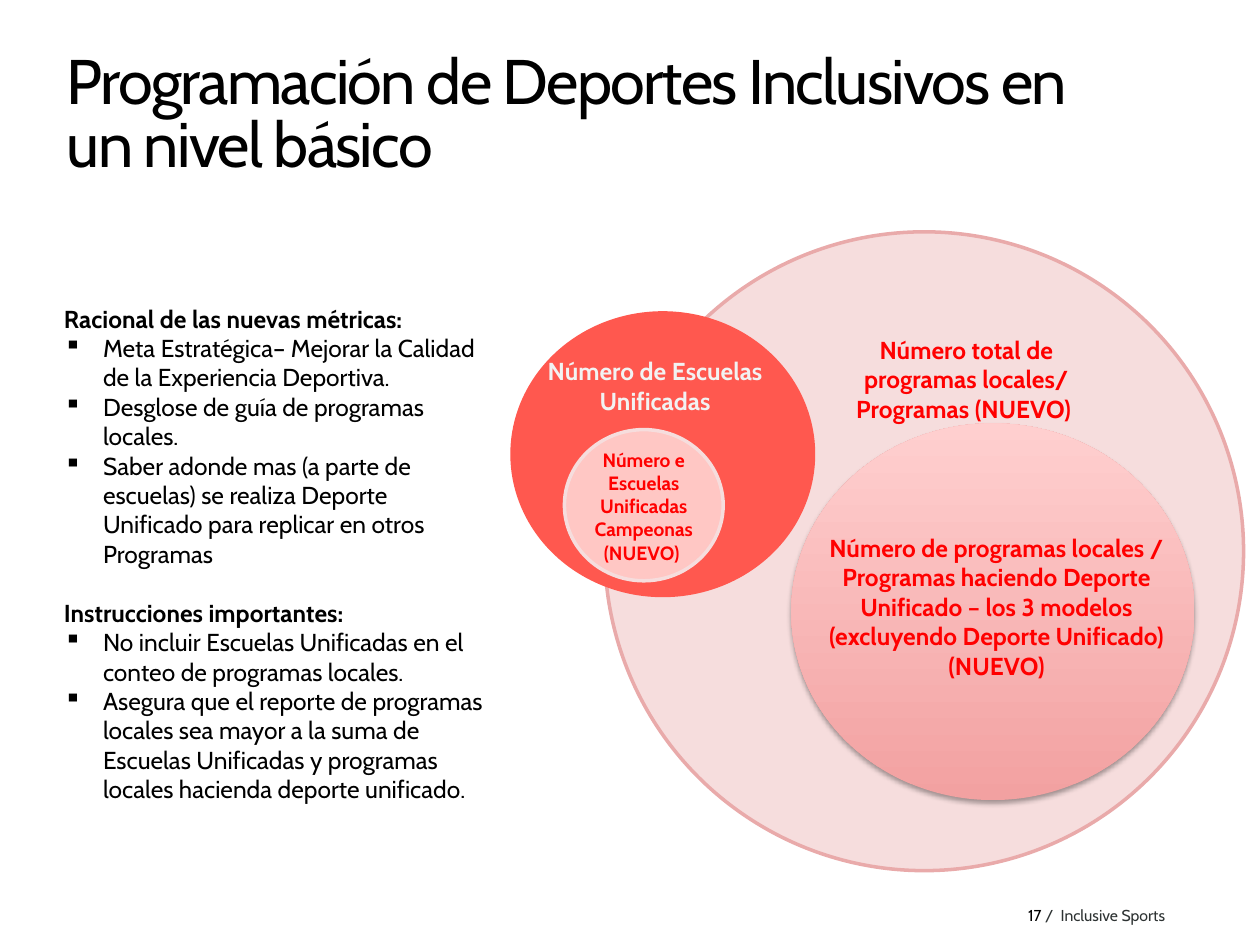
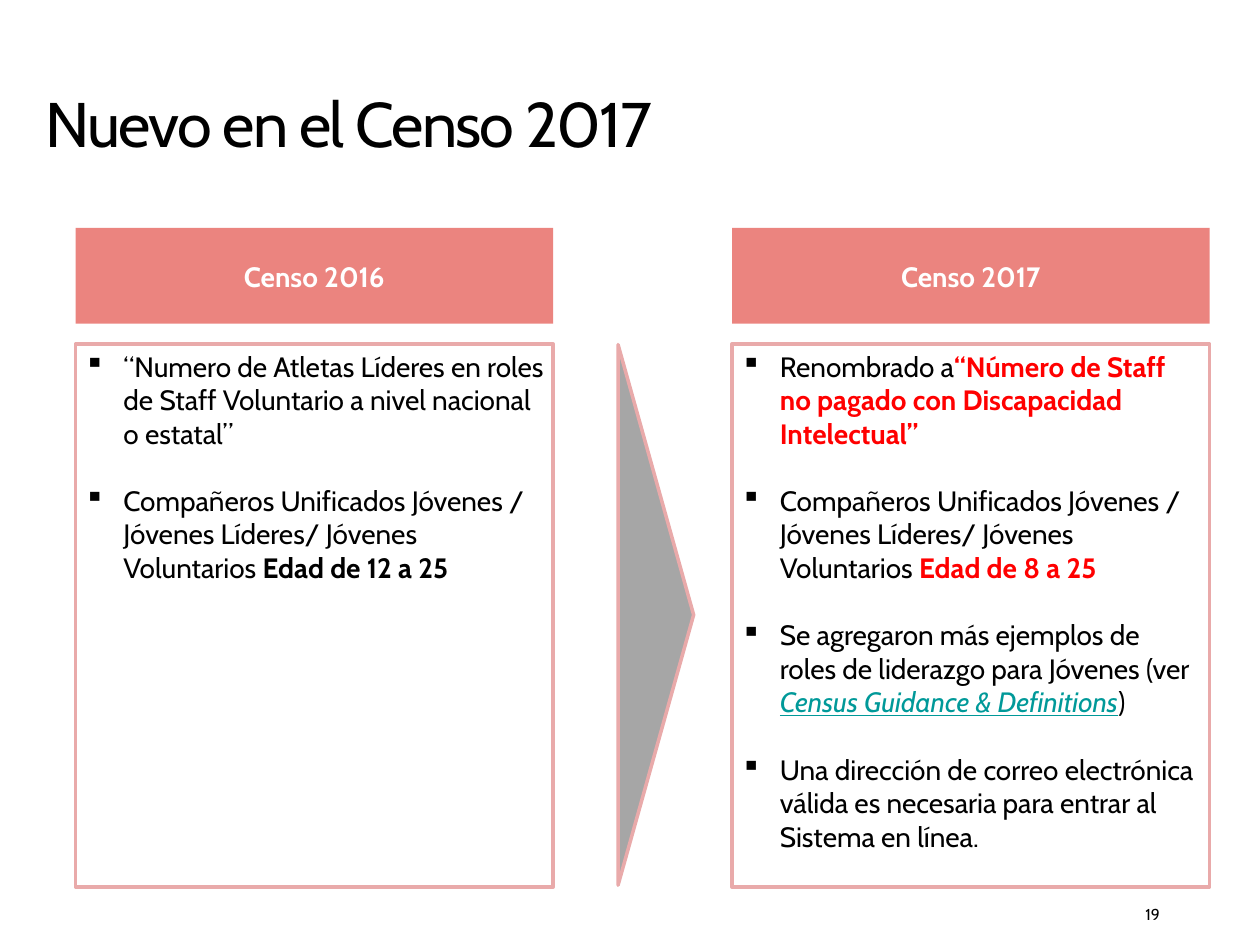
"""Builds two slides on the programme metrics and the changes in the 2017 census."""
from lxml.etree import SubElement
from pptx import Presentation
from pptx.dml.color import RGBColor
from pptx.enum.shapes import MSO_SHAPE
from pptx.enum.text import MSO_ANCHOR, MSO_AUTO_SIZE, PP_ALIGN
from pptx.oxml.ns import qn
from pptx.util import Inches, Pt

FONT = "Cabin"
COLORS = {
    "black": "000000", "white": "FFFFFF", "pale": "F2F2F2", "slate": "2E3333",
    "red": "FF0000", "coral": "FF584F", "blush": "FFC7C4", "rose": "F6DDDD",
    "outline": "E9AAAA", "band": "D90B00", "grey": "A6A6A6", "link": "009999",
    "grad_bottom": "F2A1A1", "grad_top": "FFCFCF",
}
TIGHT = (0.07, 0.04)
LOOSE = (0.1, 0.05)
RED_BOLD = {"color": "red", "bold": True}
YOUTH = "Compañeros Unificados Jóvenes / Jóvenes Líderes/ Jóvenes Voluntarios "


def rgb(name):
    return RGBColor.from_string(COLORS[name])


def place(sp, box):
    for name, value in zip(("left", "top", "width", "height"), box):
        setattr(sp, name, Inches(value))


def set_frame(tf, insets, anchor=MSO_ANCHOR.TOP):
    x, y = (Inches(v) for v in insets)
    values = {"margin_left": x, "margin_right": x, "margin_top": y, "margin_bottom": y,
              "word_wrap": True, "auto_size": MSO_AUTO_SIZE.NONE, "vertical_anchor": anchor}
    for name, value in values.items():
        setattr(tf, name, value)


def add_run(p, text, size, color="black", **fmt):
    r = p.add_run()
    r.text = text
    for name, value in {"name": FONT, "size": Pt(size), **fmt}.items():
        setattr(r.font, name, value)
    r.font.color.rgb = rgb(color)
    return r


def add_bullet(p):
    pPr = p._p.get_or_add_pPr()
    pPr.set("marL", str(Inches(0.31)))
    pPr.set("indent", str(-Inches(0.31)))
    SubElement(pPr, qn("a:buChar")).set("char", "▪")


def write(tf, paragraphs, size, align=PP_ALIGN.LEFT):
    """Fill a frame from dicts with runs, and optionally bullet and gap (one line before)."""
    for i, item in enumerate(paragraphs):
        p = tf.add_paragraph() if i else tf.paragraphs[0]
        if item.get("bullet"):
            add_bullet(p)
        p.alignment = align
        if item.get("gap"):
            p.space_before = Pt(size * 1.2)
        for text, fmt in item["runs"]:
            add_run(p, text, size, **fmt)


def para(*runs, **options):
    return {"runs": [(r, {}) if isinstance(r, str) else r for r in runs], **options}


def add_title(s, text, box):
    sp = s.shapes.title
    place(sp, box)
    set_frame(sp.text_frame, (0.04, 0.04), MSO_ANCHOR.MIDDLE)
    p = sp.text_frame.paragraphs[0]
    p.alignment, p.line_spacing = PP_ALIGN.LEFT, Pt(36)
    r = add_run(p, text, 36)
    r._r.get_or_add_rPr().set("spc", "-100")


def add_text(s, box, paragraphs, size, align=PP_ALIGN.LEFT, insets=LOOSE):
    sp = s.shapes.add_textbox(*(Inches(v) for v in box))
    set_frame(sp.text_frame, insets)
    write(sp.text_frame, paragraphs, size, align)


def add_label(s, box, text, size=14, color="red"):
    add_text(s, box, [para((text, {"color": color, "bold": True}))], size, PP_ALIGN.CENTER)


def add_figure(s, kind, box, fill, line=None):
    sp = s.shapes.add_shape(kind, *(Inches(v) for v in box))
    sp.shadow.inherit = False
    sp.fill.solid()
    sp.fill.fore_color.rgb = rgb(fill)
    if line:
        sp.line.color.rgb, sp.line.width = rgb(line), Pt(2)
    else:
        sp.line.fill.background()
    return sp


def add_gradient(sp, start, end):
    sp.fill.gradient()
    sp.fill.gradient_angle = 90
    for stop, name in zip(sp.fill.gradient_stops, (start, end)):
        stop.color.rgb = rgb(name)


def add_shadow(sp):
    effects = sp._element.spPr.find(qn("a:effectLst"))
    shadow = SubElement(effects, qn("a:outerShdw"))
    values = {"blurRad": Pt(3.1), "dist": Pt(1.8), "dir": 90 * 60000, "rotWithShape": 0}
    for name, value in values.items():
        shadow.set(name, str(value))
    color = SubElement(shadow, qn("a:srgbClr"))
    color.set("val", COLORS["black"])
    SubElement(color, qn("a:alpha")).set("val", "35000")


def add_census_column(s, left, heading, paragraphs):
    sp = add_figure(s, MSO_SHAPE.RECTANGLE, (left, 2.73, 3.79, 4.31), "white", "outline")
    set_frame(sp.text_frame, TIGHT)
    write(sp.text_frame, paragraphs, 16)
    band = add_figure(s, MSO_SHAPE.RECTANGLE, (left, 1.81, 3.79, 0.76), "band")
    color = band._element.spPr.find(qn("a:solidFill"))[0]
    SubElement(color, qn("a:alpha")).set("val", "50000")
    set_frame(band.text_frame, TIGHT, MSO_ANCHOR.MIDDLE)
    write(band.text_frame, [para((heading, {"color": "white", "bold": True}))], 16,
          PP_ALIGN.CENTER)


def add_footer(s, box, *runs):
    add_text(s, box, [para(*runs)], 9, insets=TIGHT)


def build_programs(s):
    add_title(s, "Programación de Deportes Inclusivos en un nivel básico",
              (0.49, 0.36, 8.58, 1.14))
    add_footer(s, (8.09, 7.15, 1.4, 0.2), "17", (" /  Inclusive Sports", {"color": "slate"}))
    oval = MSO_SHAPE.OVAL
    add_figure(s, oval, (4.8, 1.84, 5.07, 5.07), "rose", "outline")
    unified = add_figure(s, oval, (6.28, 3.36, 3.2, 2.99), "rose")
    add_gradient(unified, "grad_bottom", "grad_top")
    add_shadow(unified)
    add_figure(s, oval, (4.05, 2.47, 2.42, 2.27), "coral")
    sections = {
        "Racional de las nuevas métricas:": (
            "Meta Estratégica– Mejorar la Calidad de la Experiencia Deportiva.",
            "Desglose de guía de programas locales.",
            "Saber adonde mas (a parte de escuelas) se realiza Deporte Unificado "
            "para replicar en otros Programas"),
        "Instrucciones importantes:": (
            "No incluir Escuelas Unificadas en el conteo de programas locales.",
            "Asegura que el reporte de programas locales sea mayor a la suma de Escuelas "
            "Unificadas y programas locales hacienda deporte unificado."),
    }
    notes = []
    for heading, points in sections.items():
        notes.append(para((heading, {"bold": True}), gap=bool(notes)))
        notes += [para(point, bullet=True) for point in points]
    add_text(s, (0.41, 2.36, 3.56, 4.81), notes, 14)
    add_label(s, (6.43, 2.61, 2.48, 0.81),
              "Número total de programas locales/ Programas (NUEVO) ")
    add_label(s, (6.48, 4.18, 2.86, 1.28),
              "Número de programas locales / Programas haciendo Deporte Unificado – "
              "los 3 modelos (excluyendo Deporte Unificado) (NUEVO)")
    add_label(s, (4.05, 2.78, 2.3, 0.57), "Número de Escuelas Unificadas", color="pale")
    add_figure(s, oval, (4.48, 3.41, 1.26, 1.2), "blush", "rose")
    add_label(s, (4.56, 3.51, 1.1, 1.03),
              "Número e Escuelas Unificadas Campeonas (NUEVO) ", size=11)


def build_census(s):
    add_title(s, "Nuevo en el Censo 2017", (0.32, 0.56, 7.98, 0.92))
    add_footer(s, (9.02, 7.14, 0.94, 0.2), "19")
    link = {"color": "link", "italic": True, "underline": True}
    columns = {
        "Censo 2016": [
            ["“Numero de Atletas Líderes en roles de Staff Voluntario a nivel nacional "
             "o estatal”"],
            [YOUTH, ("Edad de 12 a 25", {"bold": True})]],
        "Censo 2017": [
            ["Renombrado a",
             ("“Número de Staff no pagado con Discapacidad Intelectual”", RED_BOLD)],
            [YOUTH, ("Edad de 8 a 25", RED_BOLD)],
            ["Se agregaron más ejemplos de roles de liderazgo para Jóvenes (ver ",
             ("Census Guidance & Definitions", link), ")"],
            ["Una dirección de correo electrónica válida es necesaria para entrar al "
             "Sistema en línea."]],
    }
    for i, (heading, points) in enumerate(columns.items()):
        add_census_column(s, 0.6 + 5.21 * i, heading,
                          [para(*runs, bullet=True, gap=j > 0) for j, runs in enumerate(points)])
    arrow = add_figure(s, MSO_SHAPE.ISOSCELES_TRIANGLE, (3.06, 4.58, 4.29, 0.6),
                       "grey", "outline")
    arrow.rotation = 90


def main():
    prs = Presentation()
    prs.slide_width, prs.slide_height = Inches(10), Inches(7.5)
    for build in (build_programs, build_census):
        build(prs.slides.add_slide(prs.slide_layouts[5]))
    prs.save("out.pptx")


if __name__ == "__main__":
    main()
